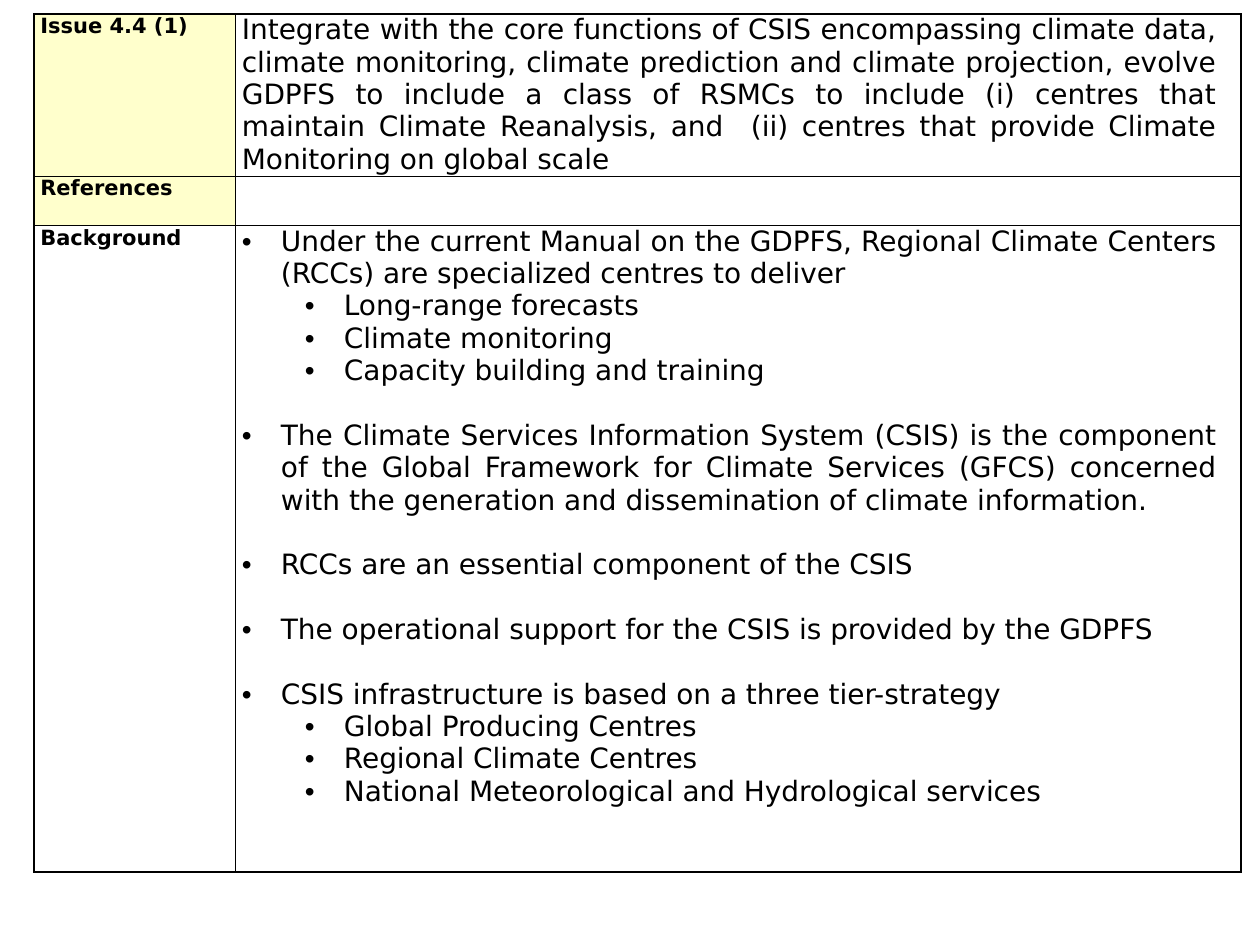
from dataclasses import dataclass

from lxml.etree import SubElement
from pptx import Presentation
from pptx.dml.color import RGBColor
from pptx.enum.text import PP_ALIGN
from pptx.oxml.ns import qn
from pptx.util import Inches, Pt


@dataclass(frozen=True)
class Theme:
    """Colours, font and type sizes of the slide."""
    face: str = "DejaVu Sans"
    ink: str = "000000"
    paper: str = "FFFFFF"
    cream: str = "FFFFCC"
    label: int = 12
    body: int = 16
    gap: float = 18.5
    rule: int = 1


THEME = Theme()
COLS = (1.6, 7.98)
ROWS = (1.29, 0.39, 5.13)
LABELS = (
    ("Issue 4.4 (1)", THEME.cream),
    ("References", THEME.cream),
    ("Background", THEME.paper),
)
ISSUE = (
    "Integrate with the core functions of CSIS encompassing climate data, "
    "climate monitoring, climate prediction and climate projection, evolve "
    "GDPFS to include a class of RSMCs to include (i) centres that maintain "
    "Climate Reanalysis, and  (ii) centres that provide Climate Monitoring "
    "on global scale"
)
POINTS = (
    ("Under the current Manual on the GDPFS, Regional Climate Centers (RCCs) "
     "are specialized centres to deliver",
     ("Long-range forecasts", "Climate monitoring",
      "Capacity building and training")),
    ("The Climate Services Information System (CSIS) is the component of the "
     "Global Framework for Climate Services (GFCS) concerned with the "
     "generation and dissemination of climate information.", ()),
    ("RCCs are an essential component of the CSIS", ()),
    ("The operational support for the CSIS is provided by the GDPFS", ()),
    ("CSIS infrastructure is based on a three tier-strategy",
     ("Global Producing Centres", "Regional Climate Centres",
      "National Meteorological and Hydrological services")),
)


def style_cell(cell, fill, right):
    """Give a cell its margins, ruled edges and fill."""
    cell.margin_left, cell.margin_right = Inches(0.05), Inches(right)
    cell.margin_top = cell.margin_bottom = 0
    props = cell._tc.get_or_add_tcPr()
    for side in ("lnL", "lnR", "lnT", "lnB"):
        line = SubElement(props, qn(f"a:{side}"), w=str(Pt(THEME.rule)))
        solid = SubElement(line, qn("a:solidFill"))
        SubElement(solid, qn("a:srgbClr"), val=THEME.ink)
    cell.fill.solid()
    cell.fill.fore_color.rgb = RGBColor.from_string(fill)


def add_text(para, text, size, bold=False):
    """Add one styled run to a paragraph."""
    run = para.add_run()
    run.text = text
    font = run.font
    font.name, font.size, font.bold = THEME.face, Pt(size), bold
    font.color.rgb = RGBColor.from_string(THEME.ink)


def add_point(para, text, level=0):
    """Fill a paragraph as a justified bullet point."""
    para.level = level
    para.alignment = PP_ALIGN.JUSTIFY
    props = para._p.get_or_add_pPr()
    props.set("marL", str(Inches(0.31 + 0.5 * level)))
    props.set("indent", str(Inches(-0.31)))
    SubElement(props, qn("a:buFont"), typeface="Arial")
    SubElement(props, qn("a:buChar"), char="•")
    add_text(para, text, THEME.body)


def fill_points(frame):
    """Write the points and their parts into a text frame."""
    for i, (head, parts) in enumerate(POINTS):
        para = frame.add_paragraph() if i else frame.paragraphs[0]
        add_point(para, head)
        if i:
            para.space_before = Pt(THEME.gap)
        for part in parts:
            add_point(frame.add_paragraph(), part, 1)


def add_grid(slide, left, top):
    """Place the issue table with its corner at the given point."""
    shape = slide.shapes.add_table(
        len(ROWS), len(COLS), Inches(left), Inches(top),
        Inches(sum(COLS)), Inches(sum(ROWS)))
    grid = shape.table
    grid.first_row = grid.horz_banding = False
    for col, width in zip(grid.columns, COLS):
        col.width = Inches(width)
    for i, (height, (label, fill)) in enumerate(zip(ROWS, LABELS)):
        grid.rows[i].height = Inches(height)
        name, text = grid.cell(i, 0), grid.cell(i, 1)
        style_cell(name, fill, 0.05)
        style_cell(text, THEME.paper, 0.19)
        add_text(name.text_frame.paragraphs[0], label, THEME.label, True)
    para = grid.cell(0, 1).text_frame.paragraphs[0]
    para.alignment = PP_ALIGN.JUSTIFY
    add_text(para, ISSUE, THEME.body)
    fill_points(grid.cell(2, 1).text_frame)


def main():
    """Build the slide and save it."""
    deck = Presentation()
    deck.slide_width, deck.slide_height = Inches(10), Inches(7.5)
    slide = deck.slides.add_slide(deck.slide_layouts[6])
    add_grid(slide, 0.27, 0.11)
    deck.save("out.pptx")


if __name__ == "__main__":
    main()
